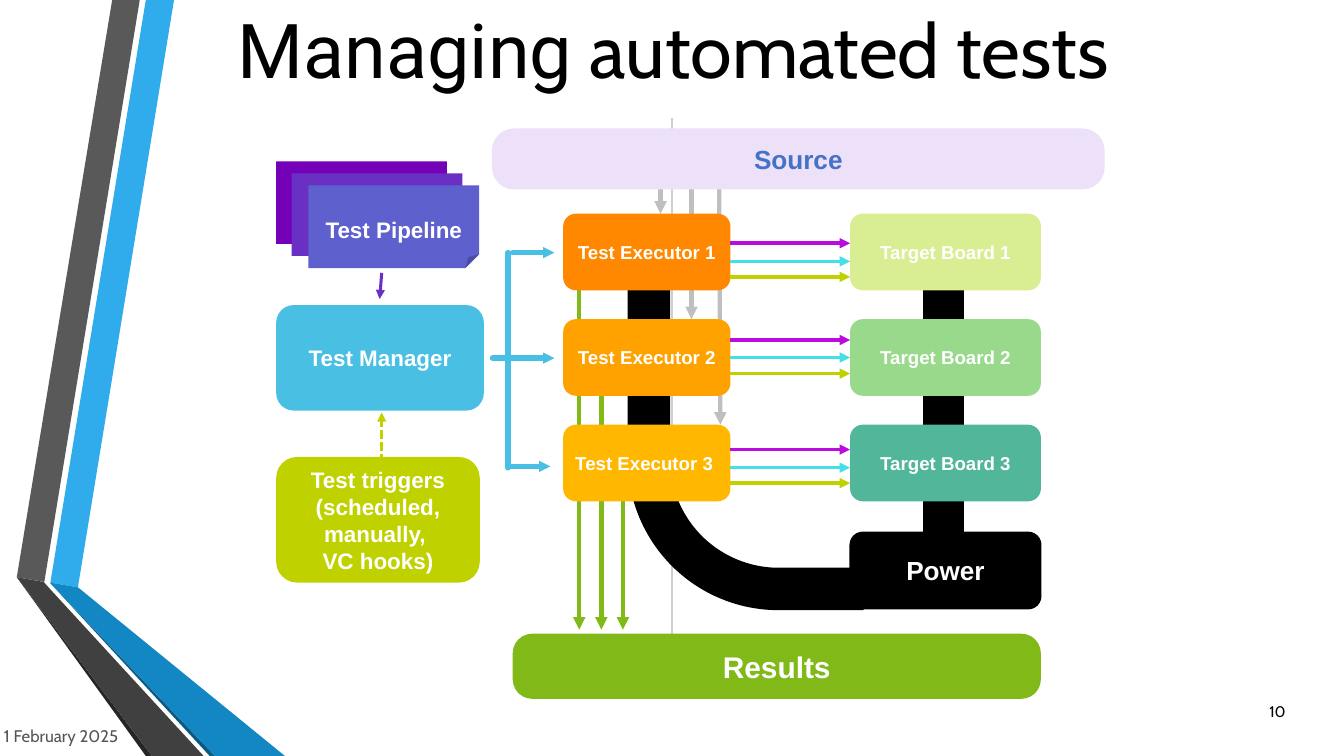
from typing import NamedTuple, Optional

from lxml.etree import SubElement
from pptx import Presentation
from pptx.dml.color import RGBColor
from pptx.enum.dml import MSO_LINE
from pptx.enum.shapes import MSO_CONNECTOR, MSO_SHAPE
from pptx.enum.text import MSO_ANCHOR, PP_ALIGN
from pptx.oxml.ns import qn
from pptx.util import Inches, Pt

WHITE = RGBColor(0xFF, 0xFF, 0xFF)
BLACK = RGBColor(0x00, 0x00, 0x00)
SKY = RGBColor(0x30, 0xAC, 0xEC)
OCEAN = RGBColor(0x12, 0x87, 0xC3)
NAVY = RGBColor(0x0C, 0x5A, 0x82)
GRAY = RGBColor(0x59, 0x59, 0x59)
CHARCOAL = RGBColor(0x40, 0x40, 0x40)
SOOT = RGBColor(0x26, 0x26, 0x26)
RULE_GRAY = RGBColor(0xCD, 0xD0, 0xD1)
DATE_GRAY = RGBColor(0x55, 0x56, 0x59)
SOURCE_GRAY = RGBColor(0xBF, 0xBF, 0xBF)
LAVENDER = RGBColor(0xED, 0xE0, 0xF9)
SOURCE_BLUE = RGBColor(0x44, 0x72, 0xC4)
CYAN_BLUE = RGBColor(0x48, 0xBF, 0xE3)
LIME = RGBColor(0xBF, 0xD2, 0x00)
GREEN = RGBColor(0x80, 0xB9, 0x18)
MAGENTA = RGBColor(0xBA, 0x0D, 0xDD)
AQUA = RGBColor(0x45, 0xDF, 0xE7)
EXECUTOR_COLORS = (RGBColor(0xFF, 0x88, 0x00), RGBColor(0xFF, 0xA2, 0x00), RGBColor(0xFF, 0xB7, 0x00))
BOARD_COLORS = (RGBColor(0xD9, 0xED, 0x92), RGBColor(0x99, 0xD9, 0x8C), RGBColor(0x52, 0xB6, 0x9A))
PIPELINE_COLORS = (RGBColor(0x74, 0x00, 0xB8), RGBColor(0x69, 0x30, 0xC3), RGBColor(0x5E, 0x60, 0xCE))


class Span(NamedTuple):
    text: str
    size: float
    color: RGBColor = WHITE
    font: str = "Arial"
    bold: bool = True


class Box(NamedTuple):
    left: float
    top: float
    width: float
    height: float
    fill: RGBColor
    lines: tuple = ()
    size: float = 24
    color: RGBColor = WHITE
    kind: MSO_SHAPE = MSO_SHAPE.ROUNDED_RECTANGLE
    adjustments: tuple = ()
    rotation: float = 0
    outline: Optional[RGBColor] = None


class Line(NamedTuple):
    start: tuple
    end: tuple
    color: RGBColor
    width: float
    arrow: Optional[str] = "med"
    dashed: bool = False
    rounded: bool = False


class Ribbon(NamedTuple):
    color: RGBColor
    points: tuple


RIBBONS = (
    Ribbon(SKY, ((0.75, 8.67), (1.16, 8.74), (2.59, 0), (2.17, 0))),
    Ribbon(GRAY, ((2.08, 0), (1.67, 0), (0.25, 8.59), (0.66, 8.66))),
    Ribbon(SOOT, ((0.25, 8.59), (2.17, 11.25), (2.26, 11.25))),
    Ribbon(NAVY, ((0.75, 8.68), (3.12, 11.25), (3.2, 11.25))),
    Ribbon(OCEAN, ((0.75, 8.68), (3.2, 11.25), (4.24, 11.25), (1.16, 8.74), (0.75, 8.67))),
    Ribbon(CHARCOAL, ((3.03, 11.25), (0.73, 8.75), (0.65, 8.66), (0.25, 8.59), (2.26, 11.25))),
)

EXECUTOR_LEFT, EXECUTOR_WIDTH = 8.38, 2.49
BOARD_LEFT, BOARD_WIDTH = 12.65, 2.84
ROW_TOP, ROW_STEP, ROW_HEIGHT = 3.18, 1.57, 1.14
CHANNEL_CENTERS = (3.89, 5.33, 6.96)
CHANNELS = ((-0.27, MAGENTA), (0, AQUA), (0.23, LIME))

POWER_PARTS = (
    Box(8.26, 4.49, 5.67, 3.51, BLACK, kind=MSO_SHAPE.BENT_ARROW,
        adjustments=(0.18, 0.09, 0, 0.64), rotation=270),
    Box(13.74, 3.48, 0.59, 5.01, BLACK, kind=MSO_SHAPE.RECTANGLE, outline=BLACK),
)
BACK_LINES = (
    Line((9.83, 2.11), (9.83, 3.18), SOURCE_GRAY, 4.5),
    Line((10.29, 2.22), (10.29, 4.75), SOURCE_GRAY, 4.5),
    Line((10.7, 2.22), (10.72, 6.32), SOURCE_GRAY, 4.5),
    Line((8.62, 4.32), (8.62, 9.37), GREEN, 4.5),
    Line((8.95, 5.72), (8.95, 9.37), GREEN, 4.5),
    Line((9.27, 7.19), (9.27, 9.37), GREEN, 4.5),
    Line((5.68, 7.62), (5.68, 6.14), LIME, 3.25, dashed=True),
    Line((7.63, 3.76), (8.25, 3.76), CYAN_BLUE, 6, arrow="sm", rounded=True),
    Line((7.56, 3.76), (7.56, 6.96), CYAN_BLUE, 6, arrow=None, rounded=True),
    Line((7.58, 6.94), (8.19, 6.94), CYAN_BLUE, 6, arrow="sm", rounded=True),
    Line((7.33, 5.33), (8.25, 5.33), CYAN_BLUE, 6, arrow="sm", rounded=True),
)
STAGES = (
    Box(7.33, 1.92, 9.1, 0.89, LAVENDER, ("Source",), 28, SOURCE_BLUE,
        adjustments=(0.36,), outline=LAVENDER),
    Box(4.11, 4.54, 3.09, 1.57, CYAN_BLUE, ("Test Manager",)),
    Box(4.11, 6.8, 3.03, 1.87, LIME, ("Test triggers", "(scheduled, manually, ", "VC hooks)")),
    Box(7.63, 9.43, 7.86, 0.97, GREEN, ("Results",), 32, adjustments=(0.3,)),
    Box(BOARD_LEFT, 7.92, BOARD_WIDTH, ROW_HEIGHT, BLACK, ("Power",), 28, outline=BLACK),
)


def add_span(para, span: Span) -> None:
    run = para.add_run()
    run.text = span.text
    run.font.name = span.font
    run.font.size = Pt(span.size)
    run.font.bold = span.bold
    run.font.color.rgb = span.color


def draw_ribbon(page, ribbon: Ribbon) -> None:
    points = [(Inches(x), Inches(y)) for x, y in ribbon.points]
    builder = page.shapes.build_freeform(*points[0], scale=1.0)
    builder.add_line_segments(points[1:], close=True)
    shape = builder.convert_to_shape()
    shape.shadow.inherit = False
    shape.fill.solid()
    shape.fill.fore_color.rgb = ribbon.color
    shape.line.fill.background()


def draw_box(page, box: Box):
    shape = page.shapes.add_shape(box.kind, *map(Inches, box[:4]))
    shape.shadow.inherit = False
    shape.rotation = box.rotation
    shape.fill.solid()
    shape.fill.fore_color.rgb = box.fill
    if box.outline is None:
        shape.line.fill.background()
    else:
        shape.line.color.rgb = box.outline
        shape.line.width = Pt(1.25)
    for index, value in enumerate(box.adjustments):
        shape.adjustments[index] = value
    frame = shape.text_frame
    frame.word_wrap = True
    frame.vertical_anchor = MSO_ANCHOR.MIDDLE
    for index, text in enumerate(box.lines):
        para = frame.add_paragraph() if index else frame.paragraphs[0]
        para.alignment = PP_ALIGN.CENTER
        add_span(para, Span(text, box.size, box.color))
    return shape


def draw_line(page, line: Line):
    connector = page.shapes.add_connector(
        MSO_CONNECTOR.STRAIGHT, *map(Inches, line.start + line.end))
    connector.line.color.rgb = line.color
    connector.line.width = Pt(line.width)
    if line.dashed:
        connector.line.dash_style = MSO_LINE.SQUARE_DOT
    properties = connector.element.spPr
    stroke = properties.find(qn("a:ln"))
    if line.rounded:
        stroke.set("cap", "rnd")
    if line.arrow:
        SubElement(stroke, qn("a:tailEnd"), type="triangle", w=line.arrow, len=line.arrow)
    SubElement(properties, qn("a:effectLst"))
    return connector


def draw_text(page, area: tuple, spans: tuple, align: PP_ALIGN, anchor: MSO_ANCHOR, inset: bool = True) -> None:
    frame = page.shapes.add_textbox(*map(Inches, area)).text_frame
    frame.word_wrap = True
    frame.vertical_anchor = anchor
    if not inset:
        frame.margin_left = frame.margin_right = frame.margin_top = frame.margin_bottom = 0
    para = frame.paragraphs[0]
    para.alignment = align
    for span in spans:
        add_span(para, span)


def draw_rows(page) -> None:
    for row, label in enumerate(("Test Executor 1", "Test Executor 2", "Test Executor 3 ")):
        top = ROW_TOP + row * ROW_STEP
        executor = draw_box(page, Box(EXECUTOR_LEFT, top, EXECUTOR_WIDTH, ROW_HEIGHT,
                                      EXECUTOR_COLORS[row], (label,), 20))
        board = draw_box(page, Box(BOARD_LEFT, top, BOARD_WIDTH, ROW_HEIGHT,
                                   BOARD_COLORS[row], (f"Target Board {row + 1}",), 20))
        for offset, color in CHANNELS:
            y = CHANNEL_CENTERS[row] + offset
            channel = draw_line(page, Line((EXECUTOR_LEFT + EXECUTOR_WIDTH, y), (BOARD_LEFT, y), color, 3.75))
            if abs(y - top - ROW_HEIGHT / 2) < 0.02:
                channel.begin_connect(executor, 3)
                channel.end_connect(board, 1)


def draw_pipeline(page) -> None:
    corners = ((4.11, 2.4), (4.34, 2.58), (4.59, 2.76))
    for (left, top), color in zip(corners, PIPELINE_COLORS):
        lines = ("Test Pipeline",) if color == PIPELINE_COLORS[-1] else ()
        sheet = draw_box(page, Box(left, top, 2.54, 1.23, color, lines, kind=MSO_SHAPE.FOLDED_CORNER))
        sheet.text_frame.margin_top = Inches(0.3)
        sheet.text_frame.margin_bottom = 0
    draw_line(page, Line((5.68, 4.06), (5.65, 4.45), PIPELINE_COLORS[1], 3.25))


def main() -> None:
    deck = Presentation()
    deck.slide_width, deck.slide_height = Inches(20), Inches(11.25)
    page = deck.slides.add_slide(deck.slide_layouts[6])
    for ribbon in RIBBONS:
        draw_ribbon(page, ribbon)
    draw_line(page, Line((10, 1.75), (10, 9.81), RULE_GRAY, 1.25, arrow=None))
    title = (Span("Managing", 81, BLACK, "Roboto", False), Span(" automated tests", 81, BLACK, "Cabin", False))
    draw_text(page, (2.06, 0, 15.91, 1.45), title, PP_ALIGN.CENTER, MSO_ANCHOR.MIDDLE)
    draw_text(page, (0, 10.7, 1.76, 0.51), (Span("1 February 2025", 18, DATE_GRAY, "Cabin", False),),
              PP_ALIGN.RIGHT, MSO_ANCHOR.MIDDLE, inset=False)
    for part in POWER_PARTS:
        draw_box(page, part)
    for line in BACK_LINES:
        draw_line(page, line)
    draw_rows(page)
    for stage in STAGES:
        draw_box(page, stage)
    draw_pipeline(page)
    draw_text(page, (18.79, 10.4, 0.9, 0.6), (Span("10", 16.5, BLACK, "Cabin", False),),
              PP_ALIGN.LEFT, MSO_ANCHOR.TOP)
    deck.save("out.pptx")


if __name__ == "__main__":
    main()
